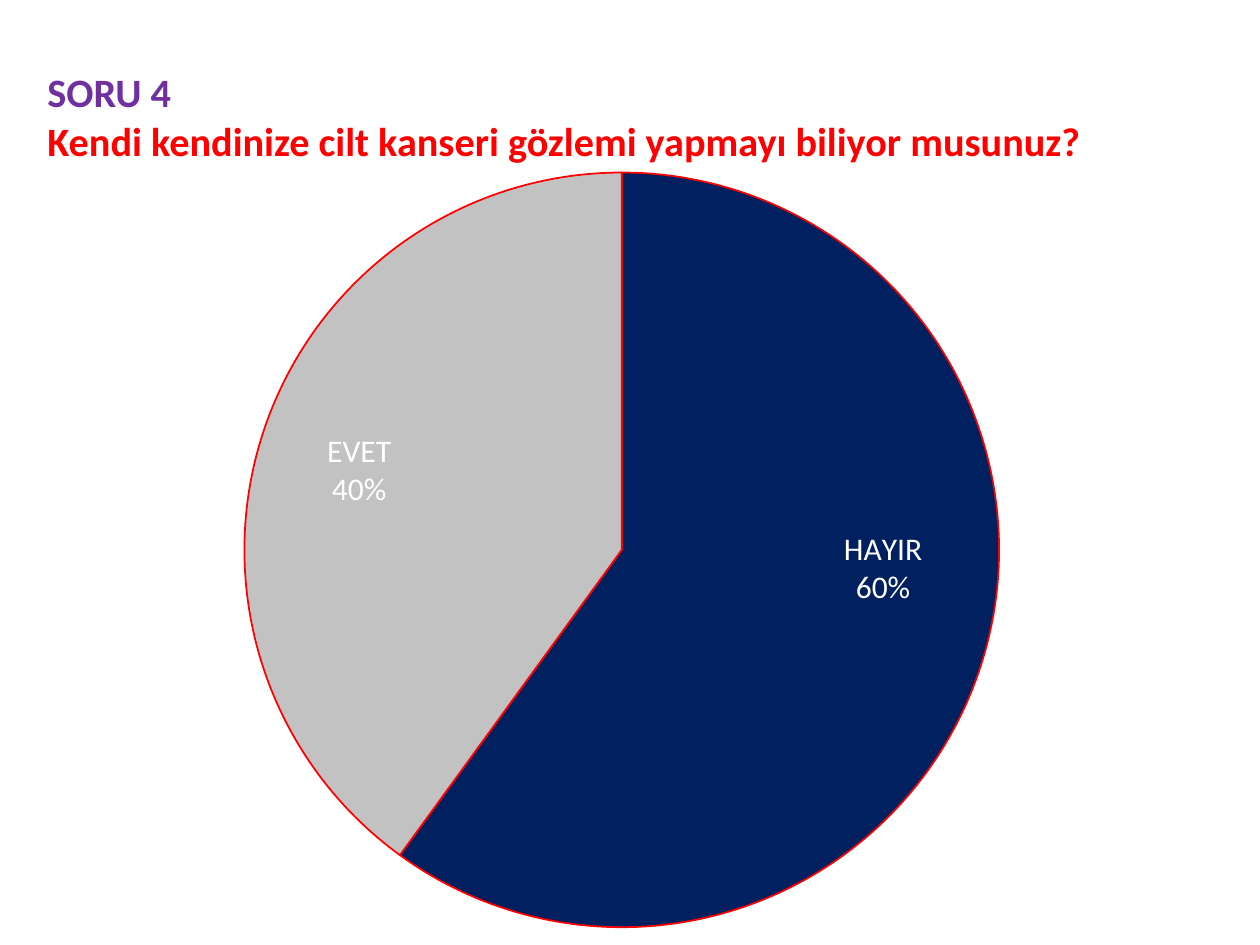
from lxml.etree import SubElement
from pptx import Presentation
from pptx.chart.data import CategoryChartData
from pptx.dml.color import RGBColor
from pptx.enum.chart import XL_CHART_TYPE, XL_LABEL_POSITION
from pptx.enum.text import MSO_ANCHOR
from pptx.oxml import parse_xml
from pptx.oxml.ns import nsdecls, qn
from pptx.util import Emu, Pt

PX = 914400 // 126
FONT = "Calibri"
COLORS = {
    "purple": "7030A0",
    "red": "FF0000",
    "navy": "002060",
    "grey": "C2C2C2",
    "white": "FFFFFF",
}
PIE_FRAME = (0, 155, 1260, 790)
PIE_AREA = (245, 17, 755, 755)
SLICES = [
    ("HAYIR", 60, "navy", (82, -40)),
    ("EVET", 40, "grey", (-83, -21)),
]


def px(*lengths):
    """Turn pixel lengths into EMU."""
    return [Emu(length * PX) for length in lengths]


def color(name):
    """Look up a named colour."""
    return RGBColor.from_string(COLORS[name])


def manual_layout(x, y, width=None, height=None):
    """Make a chart layout from pixel lengths, as shares of the chart frame."""
    layout = parse_xml(f"<c:layout {nsdecls('c')}/>")
    manual = SubElement(layout, qn("c:manualLayout"))
    settings = {"x": x / PIE_FRAME[2], "y": y / PIE_FRAME[3]}
    if width:
        settings = {"layoutTarget": "inner", "xMode": "edge", "yMode": "edge",
                    **settings, "w": width / PIE_FRAME[2], "h": height / PIE_FRAME[3]}
    for tag, value in settings.items():
        text = value if isinstance(value, str) else f"{value:.3f}"
        SubElement(manual, qn(f"c:{tag}")).set("val", text)
    return layout


def add_heading(page, frame, lines):
    """Add the question heading, one coloured paragraph per line."""
    box = page.shapes.add_textbox(*px(*frame)).text_frame
    box.word_wrap = True
    box.vertical_anchor = MSO_ANCHOR.MIDDLE
    for index, (text, name) in enumerate(lines):
        para = box.add_paragraph() if index else box.paragraphs[0]
        para.text = text
        para.font.name = FONT
        para.font.size = Pt(23)
        para.font.bold = True
        para.font.color.rgb = color(name)


def style_slice(point, fill, offset):
    """Colour one slice and shift its label from the slice centre."""
    point.format.fill.solid()
    point.format.fill.fore_color.rgb = color(fill)
    point.format.line.color.rgb = color("red")
    point.format.line.width = Pt(1)
    label = point.data_label
    label.font.size = Pt(18)
    label.font.name = FONT
    label.font.color.rgb = color("white")
    label.position = XL_LABEL_POSITION.CENTER
    return manual_layout(*offset)


def add_pie(page):
    """Add the answer pie with category and percentage labels."""
    data = CategoryChartData()
    data.categories = [label for label, *_ in SLICES]
    data.add_series("Series 1", [value for _, value, *_ in SLICES])
    chart = page.shapes.add_chart(XL_CHART_TYPE.PIE, *px(*PIE_FRAME), data).chart
    chart.has_title = False
    chart.has_legend = False
    chart.font.name = FONT
    chart.font.size = Pt(18)
    plot = chart.plots[0]
    plot.vary_by_categories = True
    series = plot.series[0]
    series.data_labels.show_category_name = True
    layouts = [style_slice(series.points[index], fill, offset)
               for index, (_, _, fill, offset) in enumerate(SLICES)]
    root = chart.element
    for label, layout in zip(root.iter(qn("c:dLbl")), layouts):
        label.find(qn("c:idx")).addnext(layout)
        for tag, shown in (("showVal", "0"), ("showCatName", "1"), ("showPercent", "1")):
            label.find(qn(f"c:{tag}")).set("val", shown)
        SubElement(label, qn("c:separator")).text = "\n"
    area = root.find(".//" + qn("c:plotArea"))
    for layout in area.findall(qn("c:layout")):
        area.remove(layout)
    area.insert(0, manual_layout(*PIE_AREA))


def main():
    """Build the survey question slide."""
    deck = Presentation()
    deck.slide_width, deck.slide_height = px(1260, 945)
    page = deck.slides.add_slide(deck.slide_layouts[6])
    add_pie(page)
    add_heading(page, (35, 37, 1260, 158), [
        ("SORU 4", "purple"),
        ("Kendi kendinize cilt kanseri gözlemi yapmayı biliyor musunuz?", "red"),
    ])
    deck.save("out.pptx")


if __name__ == "__main__":
    main()
